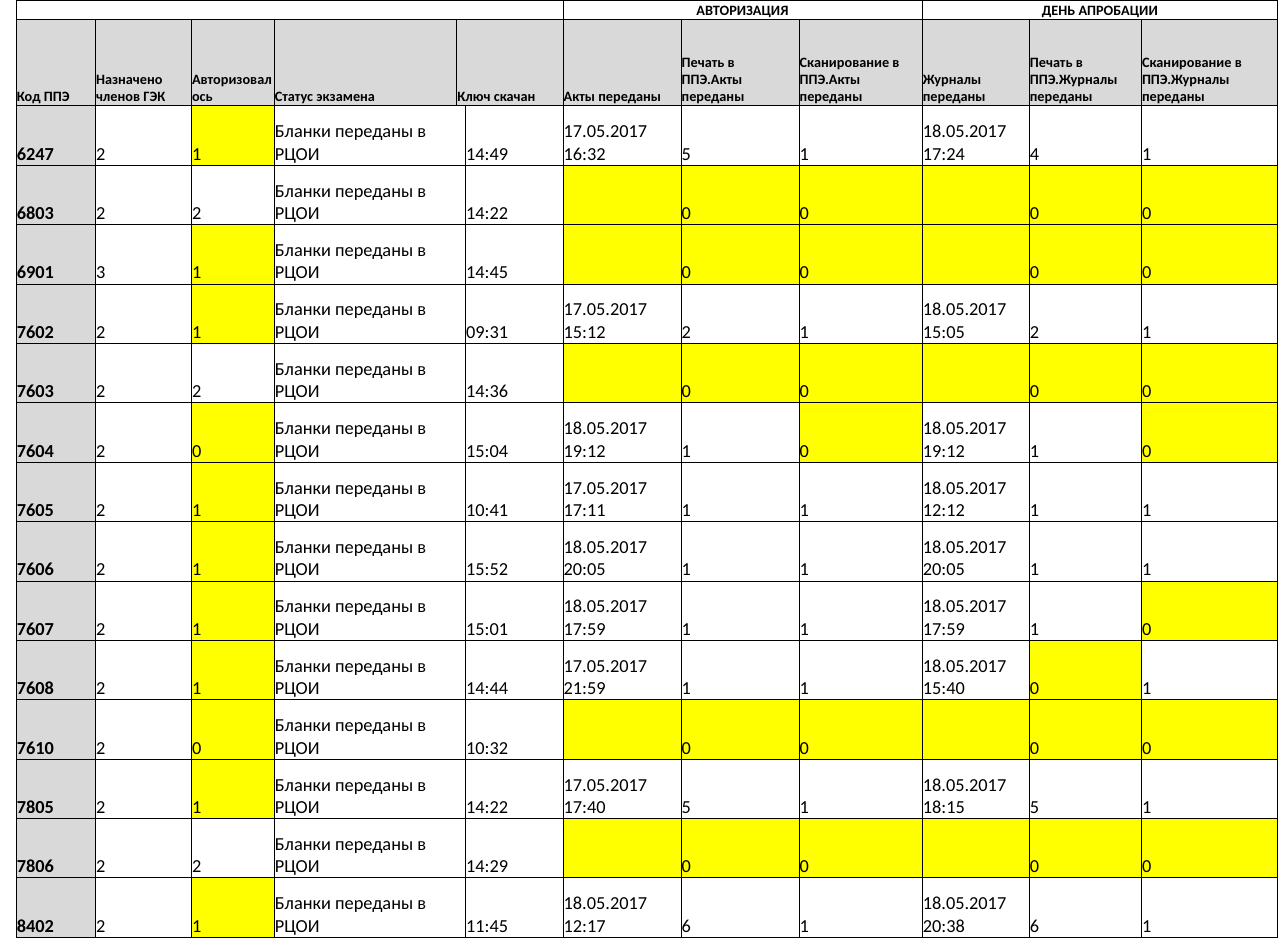
from lxml.etree import SubElement
from pptx import Presentation
from pptx.dml.color import RGBColor
from pptx.enum.text import MSO_ANCHOR, PP_ALIGN
from pptx.oxml.ns import qn
from pptx.util import Inches, Pt

BLACK = RGBColor(0x00, 0x00, 0x00)
GREY = RGBColor(0xD9, 0xD9, 0xD9)
YELLOW = RGBColor(0xFF, 0xFF, 0x00)

LEFT, WIDTH = 0.22, 17.2
HEADER_ROWS = [0.26, 1.18]
BODY_ROW = 0.81
HEADER_COLUMNS = [1.08, 1.31, 1.13, 2.49, 1.45, 1.61, 1.61, 1.68, 1.46, 1.53, 1.86]
BODY_COLUMNS = [1.08, 1.31, 1.13, 2.61, 1.33, 1.61, 1.61, 1.68, 1.46, 1.53, 1.86]
CODE, AUTHORIZED, FIRST_REPORT = 0, 2, 5

GROUPS = {0: ("", 5), 5: ("АВТОРИЗАЦИЯ", 3), 8: ("ДЕНЬ АПРОБАЦИИ", 3)}
HEADINGS = [
    "Код ППЭ", "Назначено членов ГЭК", "Авторизовалось", "Статус экзамена",
    "Ключ скачан", "Акты переданы", "Печать в ППЭ.Акты переданы",
    "Сканирование в ППЭ.Акты переданы", "Журналы переданы",
    "Печать в ППЭ.Журналы переданы", "Сканирование в ППЭ.Журналы переданы",
]
STATUS = "Бланки переданы в РЦОИ"
NO_REPORT = ("", "0", "0")

# Code, assigned, authorized, key time, acts report, journals report
STATIONS = [
    ("6247", "2", "1", "14:49", ("17.05.2017 16:32", "5", "1"), ("18.05.2017 17:24", "4", "1")),
    ("6803", "2", "2", "14:22", NO_REPORT, NO_REPORT),
    ("6901", "3", "1", "14:45", NO_REPORT, NO_REPORT),
    ("7602", "2", "1", "09:31", ("17.05.2017 15:12", "2", "1"), ("18.05.2017 15:05", "2", "1")),
    ("7603", "2", "2", "14:36", NO_REPORT, NO_REPORT),
    ("7604", "2", "0", "15:04", ("18.05.2017 19:12", "1", "0"), ("18.05.2017 19:12", "1", "0")),
    ("7605", "2", "1", "10:41", ("17.05.2017 17:11", "1", "1"), ("18.05.2017 12:12", "1", "1")),
    ("7606", "2", "1", "15:52", ("18.05.2017 20:05", "1", "1"), ("18.05.2017 20:05", "1", "1")),
    ("7607", "2", "1", "15:01", ("18.05.2017 17:59", "1", "1"), ("18.05.2017 17:59", "1", "0")),
    ("7608", "2", "1", "14:44", ("17.05.2017 21:59", "1", "1"), ("18.05.2017 15:40", "0", "1")),
    ("7610", "2", "0", "10:32", NO_REPORT, NO_REPORT),
    ("7805", "2", "1", "14:22", ("17.05.2017 17:40", "5", "1"), ("18.05.2017 18:15", "5", "1")),
    ("7806", "2", "2", "14:29", NO_REPORT, NO_REPORT),
    ("8402", "2", "1", "11:45", ("18.05.2017 12:17", "6", "1"), ("18.05.2017 20:38", "6", "1")),
]


def add_grid(page, left, top, width, columns, rows):
    """Add a plain table with the given column widths and row heights."""
    frame = page.shapes.add_table(len(rows), len(columns), Inches(left), Inches(top),
                                  Inches(width), Inches(sum(rows)))
    table = frame.table
    table.first_row = False
    table.horz_banding = False
    for column, size in zip(table.columns, columns):
        column.width = Inches(size)
    for row, size in zip(table.rows, rows):
        row.height = Inches(size)
    return table


def add_borders(cell):
    properties = cell._tc.get_or_add_tcPr()
    for side in ("a:lnL", "a:lnR", "a:lnT", "a:lnB"):
        line = SubElement(properties, qn(side), w=str(Pt(0.5)))
        fill = SubElement(line, qn("a:solidFill"))
        SubElement(fill, qn("a:srgbClr"), val=str(BLACK))


def format_cell(cell, text, size, bold=False, color=None, align=PP_ALIGN.LEFT):
    cell.margin_left = cell.margin_right = cell.margin_top = Inches(0.01)
    cell.margin_bottom = 0
    cell.vertical_anchor = MSO_ANCHOR.BOTTOM
    add_borders(cell)
    if color is None:
        cell.fill.background()
    else:
        cell.fill.solid()
        cell.fill.fore_color.rgb = color
    cell.text_frame.text = text
    para = cell.text_frame.paragraphs[0]
    para.alignment = align
    for span in para.runs:
        span.font.name = "Calibri"
        span.font.size = Pt(size)
        span.font.bold = bold
        span.font.color.rgb = BLACK
    if not text:
        # An empty cell keeps the row as low as its text size allows
        SubElement(para._p, qn("a:endParaRPr"), sz=str(size * 100))


def add_header(page, left, top, width):
    table = add_grid(page, left, top, width, HEADER_COLUMNS, HEADER_ROWS)
    for column, heading in enumerate(HEADINGS):
        group = GROUPS.get(column, ("", 1))[0]
        format_cell(table.cell(0, column), group, 14, bold=True, align=PP_ALIGN.CENTER)
        format_cell(table.cell(1, column), heading, 14, bold=True, color=GREY)
    for start, (_, count) in GROUPS.items():
        table.cell(0, start).merge(table.cell(0, start + count - 1))


def body_color(column, text, assigned):
    if column == CODE:
        return GREY
    if column == AUTHORIZED and int(text) < int(assigned):
        return YELLOW
    if column >= FIRST_REPORT and text in NO_REPORT:
        return YELLOW
    return None


def add_body(page, left, top, width):
    table = add_grid(page, left, top, width, BODY_COLUMNS, [BODY_ROW] * len(STATIONS))
    for row, (code, assigned, authorized, key_time, acts, journals) in enumerate(STATIONS):
        values = [code, assigned, authorized, STATUS, key_time, *acts, *journals]
        for column, text in enumerate(values):
            format_cell(table.cell(row, column), text, 18, bold=column == CODE,
                        color=body_color(column, text, assigned))


def main():
    deck = Presentation()
    deck.slide_width = Inches(17.57)
    deck.slide_height = Inches(12.79)
    page = deck.slides.add_slide(deck.slide_layouts[6])
    add_header(page, LEFT, 0, WIDTH)
    add_body(page, LEFT, sum(HEADER_ROWS), WIDTH)
    deck.save("out.pptx")


if __name__ == "__main__":
    main()
